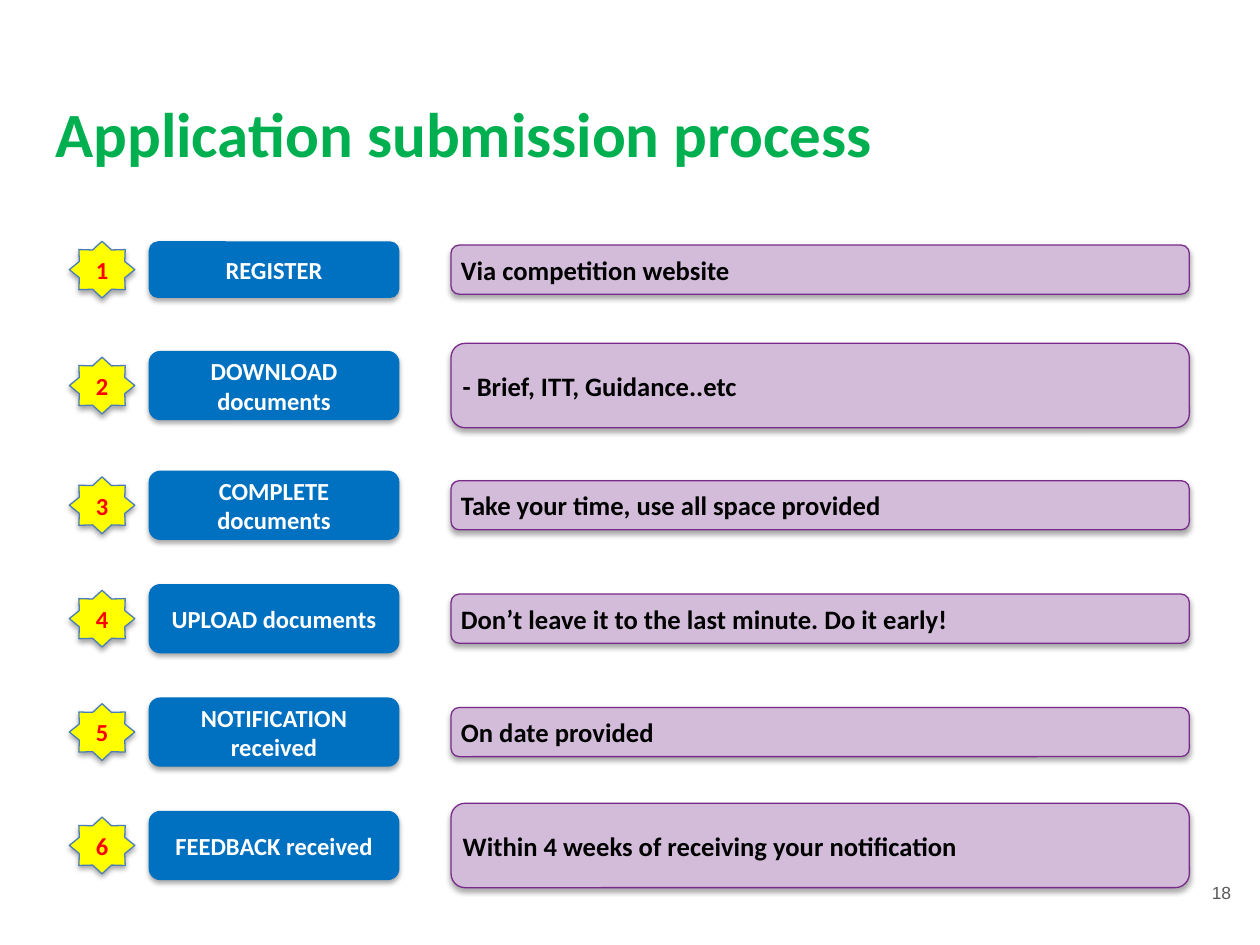
from dataclasses import dataclass

from lxml.etree import SubElement
from pptx import Presentation
from pptx.dml.color import RGBColor
from pptx.enum.shapes import MSO_SHAPE as Preset
from pptx.enum.text import MSO_ANCHOR as Anchor, MSO_AUTO_SIZE as AutoSize, PP_ALIGN as Align
from pptx.oxml.ns import qn
from pptx.util import Inches, Pt


@dataclass(frozen=True)
class Step:
    middle: float
    action: str
    detail: str
    action_height: float = 0.55
    detail_height: float = 0.39


@dataclass(frozen=True)
class Style:
    preset: Preset
    left: float
    width: float
    fill: str
    line: str | None
    color: str
    size: float
    align: Align
    adjustment: float


BADGE = Style(Preset.STAR_8_POINT, 0.55, 0.52, "FFFF00", "4A7DBA", "FF0000", 14, Align.CENTER, 0.375)
ACTION = Style(Preset.ROUNDED_RECTANGLE, 1.18, 1.99, "0070C0", None, "FFFFFF", 14, Align.CENTER, 0.167)
DETAIL = Style(Preset.ROUNDED_RECTANGLE, 3.58, 5.86, "D3BCDA", "792B8B", "000000", 15.2, Align.LEFT, 0.167)
BADGE_HEIGHT = 0.45

STEPS = [
    Step(2.14, "REGISTER", "Via competition website", action_height=0.45),
    Step(3.06, "DOWNLOAD documents", "- Brief, ITT, Guidance..etc", detail_height=0.67),
    Step(4.01, "COMPLETE documents", "Take your time, use all space provided"),
    Step(4.91, "UPLOAD documents", "Don’t leave it to the last minute. Do it early!"),
    Step(5.81, "NOTIFICATION received", "On date provided"),
    Step(6.71, "FEEDBACK received", "Within 4 weeks of receiving your notification", detail_height=0.67),
]


def rgb(color: str) -> RGBColor:
    return RGBColor.from_string(color)


def place(box, left: float, top: float, width: float, height: float) -> None:
    box.left, box.top = Inches(left), Inches(top)
    box.width, box.height = Inches(width), Inches(height)


def write(box, text: str, size: float, color: str, align: Align, anchor: Anchor,
          side: float, edge: float, font: str = "Calibri", bold: bool = True) -> None:
    frame = box.text_frame
    frame.word_wrap = True
    frame.auto_size = AutoSize.NONE
    frame.vertical_anchor = anchor
    frame.margin_left = frame.margin_right = Inches(side)
    frame.margin_top = frame.margin_bottom = Inches(edge)
    para = frame.paragraphs[0]
    para.alignment = align
    span = para.add_run()
    span.text = text
    span.font.name = font
    span.font.size = Pt(size)
    span.font.bold = bold
    span.font.color.rgb = rgb(color)


def add_shadow(shape) -> None:
    shape.shadow.inherit = False
    effects = shape._element.spPr.find(qn("a:effectLst"))
    shadow = SubElement(effects, qn("a:outerShdw"), blurRad=str(Pt(3.1)),
                        dist=str(Pt(1.8)), dir="5400000", rotWithShape="0")
    color = SubElement(shadow, qn("a:srgbClr"), val="000000")
    SubElement(color, qn("a:alpha"), val="35000")


def add_block(page, style: Style, middle: float, height: float, text: str) -> None:
    shape = page.shapes.add_shape(style.preset, Inches(style.left), Inches(middle - height / 2),
                                  Inches(style.width), Inches(height))
    shape.adjustments[0] = style.adjustment
    shape.fill.solid()
    shape.fill.fore_color.rgb = rgb(style.fill)
    if style.line:
        shape.line.color.rgb = rgb(style.line)
        shape.line.width = Pt(0.75)
    else:
        shape.line.fill.background()
    add_shadow(shape)
    write(shape, text, style.size, style.color, style.align, Anchor.MIDDLE, 0.06, 0.03)


def add_step(page, number: int, step: Step) -> None:
    add_block(page, DETAIL, step.middle, step.detail_height, step.detail)
    add_block(page, ACTION, step.middle, step.action_height, step.action)
    add_block(page, BADGE, step.middle, BADGE_HEIGHT, str(number))


def main() -> None:
    deck = Presentation()
    deck.slide_width, deck.slide_height = Inches(10), Inches(7.5)
    page = deck.slides.add_slide(deck.slide_layouts[5])

    title = page.shapes.title
    place(title, 0.34, 0.65, 9.32, 0.84)
    write(title, "Application submission process", 36, "00B050", Align.LEFT, Anchor.TOP, 0.1, 0.1)

    for number, step in enumerate(STEPS, start=1):
        add_step(page, number, step)

    page_number = page.shapes.add_textbox(Inches(9.27), Inches(6.8), Inches(0.6), Inches(0.57))
    write(page_number, "18", 10, "595959", Align.RIGHT, Anchor.MIDDLE, 0.1, 0.1, "Arial", False)

    deck.save("out.pptx")


if __name__ == "__main__":
    main()
